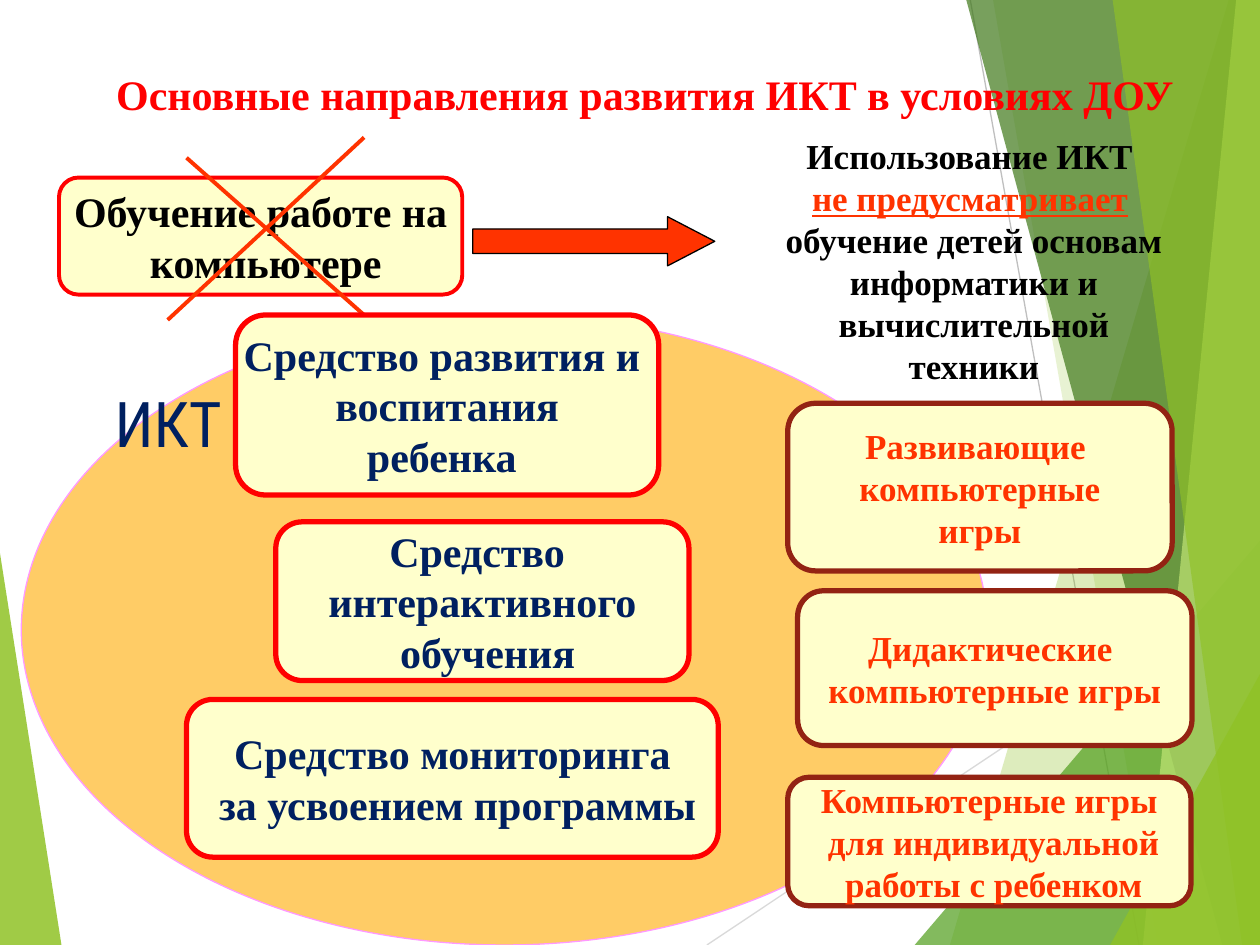
from dataclasses import dataclass

from lxml import etree
from pptx import Presentation
from pptx.dml.color import RGBColor
from pptx.enum.shapes import MSO_CONNECTOR, MSO_SHAPE
from pptx.enum.text import MSO_ANCHOR, PP_ALIGN
from pptx.oxml.ns import qn
from pptx.util import Cm, Pt

LINE = MSO_CONNECTOR.STRAIGHT
OVAL, ARROW = MSO_SHAPE.OVAL, MSO_SHAPE.RIGHT_ARROW
ROUND, CARD = MSO_SHAPE.ROUNDED_RECTANGLE, MSO_SHAPE.FLOWCHART_ALTERNATE_PROCESS
TOP, MID = MSO_ANCHOR.TOP, MSO_ANCHOR.MIDDLE
CENTER = PP_ALIGN.CENTER


@dataclass(frozen=True)
class Theme:
    serif: str = "Times New Roman"
    sans: str = "Roboto Condensed"
    big: int = 36
    head: int = 24
    body: int = 20
    red: str = "FF0000"
    flame: str = "FF3300"
    brown: str = "932313"
    navy: str = "002060"
    black: str = "000000"
    cream: str = "FFFFCC"
    gold: str = "FFCC66"
    pink: str = "FF99FF"
    slate: str = "666699"
    pale: str = "D9D9D9"
    gray: str = "BFBFBF"
    lime: str = "90C226"
    leaf: str = "54A021"
    moss: str = "3F7819"
    mint: str = "C0E474"


T = Theme()


def rgb(code):
    return RGBColor.from_string(code)


def write(shape, text, size=T.head, color=T.black, font=T.serif, bold=True,
          anchor=MID, wrap=False):
    """Set centred text: a newline starts a paragraph, a vertical tab a line."""
    frame = shape.text_frame
    frame.word_wrap = wrap
    frame.vertical_anchor = anchor
    for i, line in enumerate(text.split("\n")):
        para = frame.add_paragraph() if i else frame.paragraphs[0]
        para.text = line
        para.alignment = CENTER
        for run in para.runs:
            run.font.name, run.font.size, run.font.bold = font, Pt(size), bold
            run.font.color.rgb = rgb(color)
    return frame


def label(slide, box, text, **style):
    return write(slide.shapes.add_textbox(*map(Cm, box)), text, **style)


def block(slide, kind, box, fill, edge, width):
    shape = slide.shapes.add_shape(kind, *map(Cm, box))
    shape.shadow.inherit = False
    shape.fill.solid()
    shape.fill.fore_color.rgb = rgb(fill)
    shape.line.color.rgb = rgb(edge)
    shape.line.width = Pt(width)
    return shape


def stroke(slide, ends, color, width):
    line = slide.shapes.add_connector(LINE, *map(Cm, ends))
    line.line.color.rgb = rgb(color)
    line.line.width = Pt(width)
    etree.SubElement(line._element.spPr, qn("a:effectLst"))


def shard(slide, points, color, alpha):
    """Draw a borderless polygon with the given opacity in percent."""
    first, *rest = [(Cm(x), Cm(y)) for x, y in points]
    form = slide.shapes.build_freeform(*first)
    form.add_line_segments(rest)
    shape = form.convert_to_shape()
    shape.shadow.inherit = False
    shape.fill.solid()
    shape.fill.fore_color.rgb = rgb(color)
    shape.line.fill.background()
    tint = shape._element.spPr.find(qn("a:solidFill"))[0]
    etree.SubElement(tint, qn("a:alpha"), val=str(alpha * 1000))


def decor(slide, box):
    x, y, w, h = box
    end, base = x + w, y + h
    shard(slide, [(x, y + 11.15), (x + 1.24, base), (x, base)], T.lime, 85)
    stroke(slide, (x + 14.25, base, end, y + 11.61), T.pale, 0.75)
    stroke(slide, (x + 19.56, y, x + 22.96, base), T.gray, 0.75)
    for tip, drop, foot, color, alpha in (
            (24.77, 0, 19.15, T.lime, 30),
            (20.02, 0, 23.34, T.lime, 20),
            (w, 10.9, 18.44, T.leaf, 72),
            (19.48, 0, 24.64, T.moss, 70),
            (24.92, 0, 23.04, T.mint, 70),
            (22.43, 0, 25.04, T.lime, 65),
            (w, 13.59, 22.38, T.lime, 80)):
        shard(slide, [(x + tip, y + drop), (x + foot, base), (end, base),
                      (end, y + drop)], color, alpha)


def cards(slide, box, items, edge, **style):
    """Place cards given as left, top, width, height, text within the box."""
    x, y = box[:2]
    for left, top, w, h, text in items:
        card = block(slide, CARD, (x + left, y + top, w, h), T.cream, edge, 3)
        write(card, text, **style)


def drill(slide, box):
    """Crossed-out goal with the arrow that leads to the rule."""
    x, y, w, h = box
    goal = block(slide, ROUND, box, T.cream, T.red, 2.25)
    write(goal, "Обучение работе на\v компьютере")
    for x1, y1, x2, y2 in ((2.57, -0.4, 6.15, 2.77), (6.15, -0.81, 2.19, 2.87)):
        stroke(slide, (x + x1, y + y1, x + x2, y + y2), T.flame, 2.25)
    arrow = block(slide, ARROW, (x + w + 0.21, y + 0.79, 4.88, 0.99),
                  T.flame, T.black, 0.75)
    arrow.adjustments[0], arrow.adjustments[1] = 0.5, 0.96


def means(slide, box):
    x, y = box[:2]
    block(slide, OVAL, box, T.gold, T.pink, 0.75)
    cards(slide, box, (
        (4.32, 0, 8.53, 3.63, "Средство развития и \nвоспитания\nребенка "),
        (5.13, 4.17, 8.33, 3.2, "Средство \nинтерактивного\n обучения"),
        (3.33, 7.75, 10.72, 3.18,
         "Средство мониторинга\n за усвоением программы"),
    ), T.red, color=T.navy)
    frame = label(slide, (x + 0.84, y + 1.27, 4.24, 8.05), "ИКТ", size=T.big,
                  color=T.navy, font=T.sans, bold=None, anchor=TOP)
    edge = etree.Element(qn("a:ln"), w=str(Pt(0.75)))
    fill = etree.SubElement(edge, qn("a:solidFill"))
    etree.SubElement(fill, qn("a:srgbClr"), val=T.slate)
    frame.paragraphs[0].runs[0].font._element.insert(0, edge)


def rule(slide, box):
    frame = label(
        slide, box,
        "Использование ИКТ \nне предусматривает\n"
        "обучение детей основам информатики и вычислительной техники",
        size=T.body, anchor=TOP, wrap=True)
    para = frame.paragraphs[1]
    font = para.runs[0].font
    font.underline = True
    font.color.rgb = rgb(T.flame)
    space = para.add_run()
    space.text = " "
    space.font.size = Pt(T.body)


def games(slide, box):
    cards(slide, box, (
        (0.2, 3.78, 7.95, 3.12, "Дидактические \nкомпьютерные игры"),
        (0, 0, 7.75, 3.38, "Развивающие \nкомпьютерные\n игры "),
        (0, 7.54, 8.13, 2.59,
         "Компьютерные игры\n для индивидуальной\n работы с ребенком"),
    ), T.brown, size=T.body, color=T.flame)


def main():
    deck = Presentation()
    deck.slide_width, deck.slide_height = Cm(25.4), Cm(19.05)
    slide = deck.slides.add_slide(deck.slide_layouts[6])
    decor(slide, (0, 0, 25.4, 19.05))
    label(slide, (1.19, 1.19, 23.62, 1.4),
          "Основные направления развития ИКТ в условиях ДОУ",
          color=T.red, wrap=True)
    drill(slide, (1.19, 3.58, 8.13, 2.36))
    means(slide, (0.43, 6.35, 19.48, 12.7))
    rule(slide, (15.47, 2.59, 8.33, 5.38))
    games(slide, (15.88, 8.13, 8.15, 10.13))
    deck.save("out.pptx")


if __name__ == "__main__":
    main()
